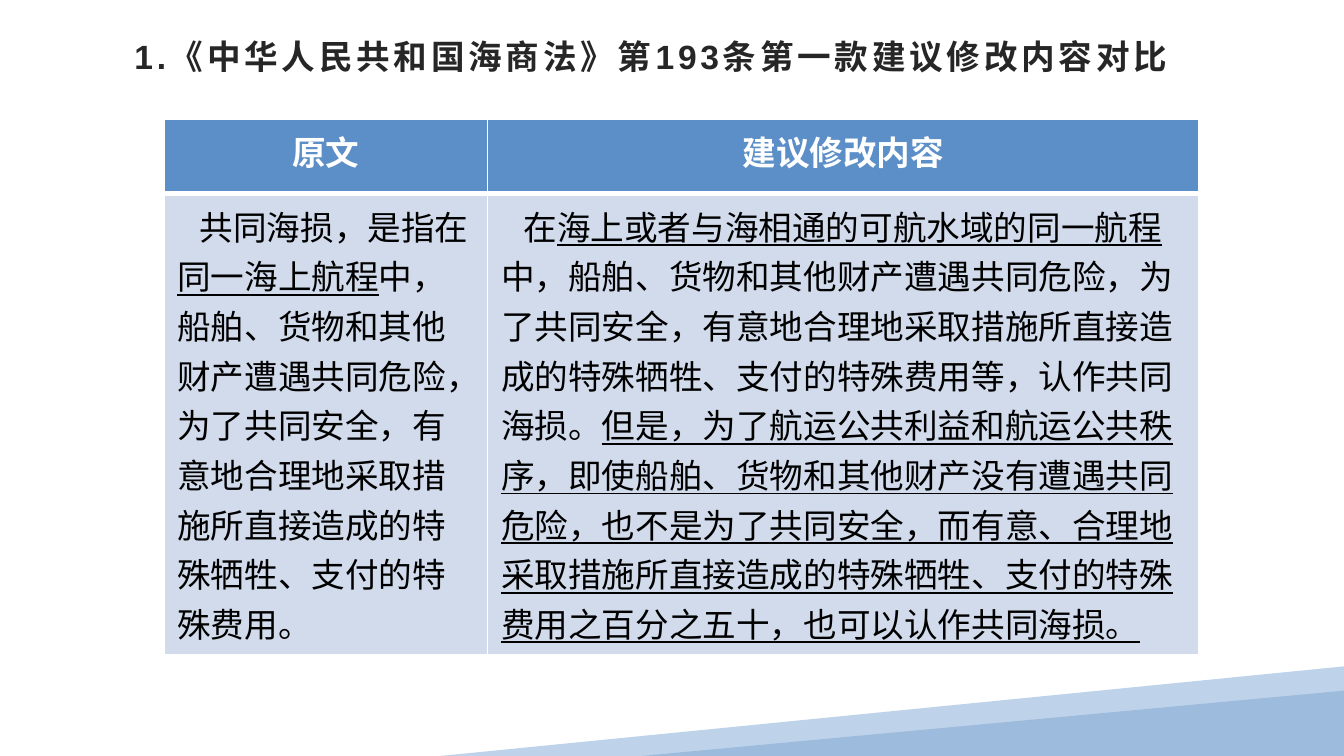
from dataclasses import dataclass

from lxml.etree import SubElement
from pptx import Presentation
from pptx.dml.color import RGBColor
from pptx.enum.shapes import MSO_SHAPE as Shape
from pptx.enum.text import MSO_ANCHOR as Anchor, PP_ALIGN as Align
from pptx.oxml.ns import qn
from pptx.util import Pt


@dataclass(frozen=True)
class Theme:
    white: str = "FFFFFF"
    black: str = "000000"
    title: str = "262626"
    header: str = "5C8FC7"
    body: str = "D2DBEB"
    light_wedge: str = "BED2E9"
    dark_wedge: str = "9DBCDD"
    latin: str = "Arial"
    chinese: str = "Noto Sans CJK SC"
    size: int = 18


theme = Theme()


def style_run(span, color, latin, bold=False, underline=False):
    font = span.font
    font.size, font.name = Pt(theme.size), latin
    font.bold, font.underline = bold, underline
    font.color.rgb = RGBColor.from_string(color)
    SubElement(span._r.get_or_add_rPr(), qn("a:ea"), typeface=theme.chinese)


def add_border(cell, side, width):
    line = SubElement(cell._tc.get_or_add_tcPr(), qn(f"a:ln{side}"), w=str(Pt(width)))
    fill = SubElement(line, qn("a:solidFill"))
    SubElement(fill, qn("a:srgbClr"), val=theme.white)


deck = Presentation()
deck.slide_width, deck.slide_height = Pt(720), Pt(405)
page = deck.slides.add_slide(deck.slide_layouts[6])

# Wedges in the bottom corner
outline = page.shapes.build_freeform(Pt(720), Pt(357))
outline.add_line_segments([(Pt(720), Pt(402)), (Pt(484.5), Pt(405)), (Pt(236), Pt(405))])
light_wedge = outline.convert_to_shape()
dark_wedge = page.shapes.add_shape(Shape.ISOSCELES_TRIANGLE, Pt(343.5), Pt(370), Pt(376.5), Pt(35))
dark_wedge.adjustments[0] = 1
for wedge, color in ((light_wedge, theme.light_wedge), (dark_wedge, theme.dark_wedge)):
    wedge.fill.solid()
    wedge.fill.fore_color.rgb = RGBColor.from_string(color)
    wedge.line.fill.background()
    wedge.shadow.inherit = False

# Title
box = page.shapes.add_textbox(Pt(64), Pt(14.4), Pt(685), Pt(31.7))
frame = box.text_frame
frame.word_wrap = True
frame.vertical_anchor = Anchor.MIDDLE
frame.margin_left, frame.margin_right = Pt(8), Pt(6)
frame.margin_top = frame.margin_bottom = Pt(3)
frame.text = "1.《中华人民共和国海商法》第193条第一款建议修改内容对比"
span = frame.paragraphs[0].runs[0]
style_run(span, theme.title, theme.latin, bold=True)
span._r.get_or_add_rPr().set("spc", "200")

# Comparison table: each cell is a list of (text, underlined)
rows = [
    [[("原文", False)], [("建议修改内容", False)]],
    [
        [
            ("共同海损，是指在", False),
            ("同一海上航程", True),
            ("中，船舶、货物和其他财产遭遇共同危险，为了共同安全，有意地合理地采取措施"
             "所直接造成的特殊牺牲、支付的特殊费用。", False),
        ],
        [
            ("在", False),
            ("海上或者与海相通的可航水域的同一航程", True),
            ("中，船舶、货物和其他财产遭遇共同危险，为了共同安全，有意地合理地采取措施"
             "所直接造成的特殊牺牲、支付的特殊费用等，认作共同海损。", False),
            ("但是，为了航运公共利益和航运公共秩序，即使船舶、货物和其他财产没有遭遇"
             "共同危险，也不是为了共同安全，而有意、合理地采取措施所直接造成的特殊牺牲、"
             "支付的特殊费用之百分之五十，也可以认作共同海损。", True),
        ],
    ],
]
widths, heights = (173.5, 380.9), (39.6, 247)
table = page.shapes.add_table(2, 2, Pt(87.8), Pt(64.1), Pt(sum(widths)), Pt(sum(heights))).table
for column, width in zip(table.columns, widths):
    column.width = Pt(width)
for row, height in zip(table.rows, heights):
    row.height = Pt(height)

for row_index, row in enumerate(rows):
    is_header = row_index == 0
    for column_index, pieces in enumerate(row):
        cell = table.cell(row_index, column_index)
        for side in "LRTB":
            heavy = (is_header and side == "B") or (not is_header and side == "T")
            add_border(cell, side, 3 if heavy else 1)
        cell.fill.solid()
        cell.fill.fore_color.rgb = RGBColor.from_string(theme.header if is_header else theme.body)
        para = cell.text_frame.paragraphs[0]
        if is_header:
            para.alignment = Align.CENTER
        else:
            para.line_spacing = Pt(26.6)
            para._p.get_or_add_pPr().set("indent", str(Pt(12)))
        for text, underlined in pieces:
            span = para.add_run()
            span.text = text
            style_run(span, theme.white if is_header else theme.black, theme.chinese,
                      bold=is_header, underline=underlined)

deck.save("out.pptx")
